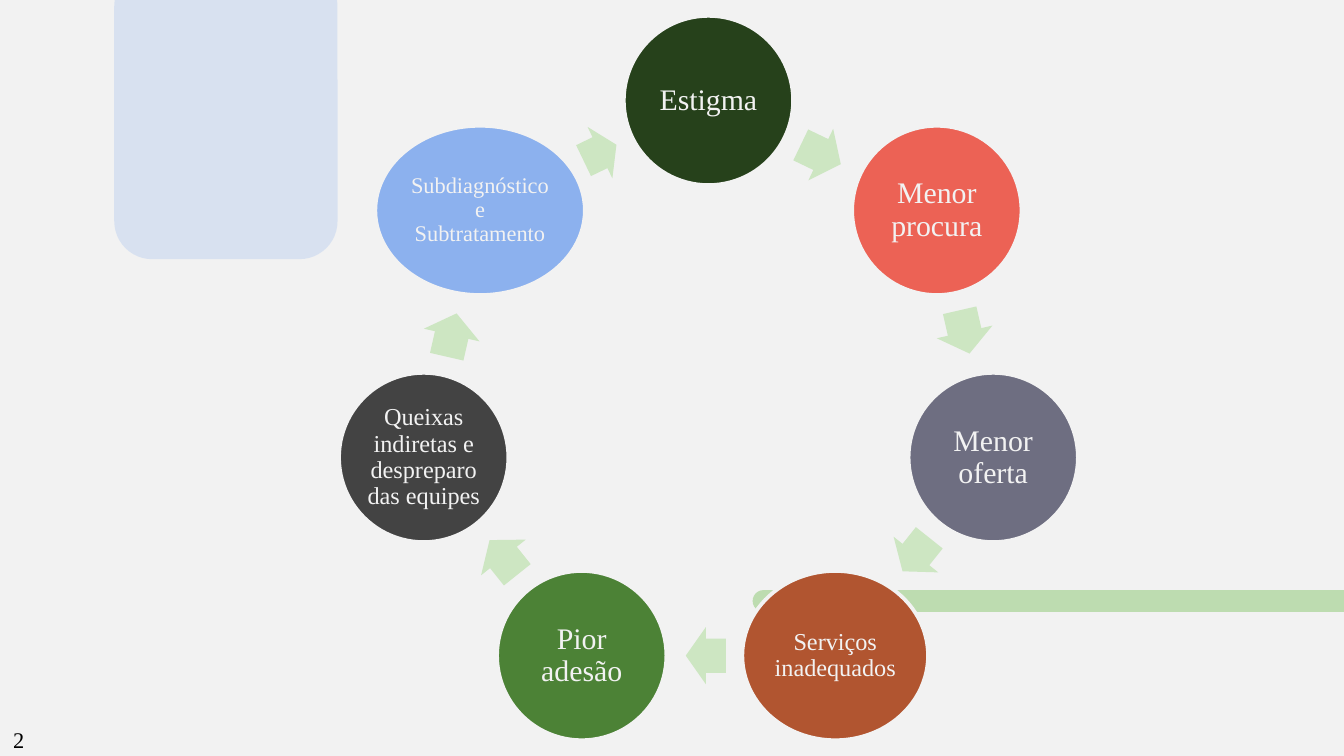
"""Build a slide showing the cycle of stigma as a ring of seven linked circles."""
from dataclasses import dataclass
from math import cos, pi, radians, sin

from lxml import etree
from pptx import Presentation
from pptx.dml.color import RGBColor
from pptx.enum.shapes import MSO_SHAPE
from pptx.enum.text import MSO_ANCHOR, PP_ALIGN
from pptx.oxml.ns import qn
from pptx.util import Cm, Pt

ROUND = MSO_SHAPE.ROUNDED_RECTANGLE
OVAL = MSO_SHAPE.OVAL
ARROW = MSO_SHAPE.RIGHT_ARROW
MIDDLE = MSO_ANCHOR.MIDDLE
CENTER = PP_ALIGN.CENTER


@dataclass
class Theme:
    font: str = "Times New Roman"
    back: str = "F2F2F2"
    ink: str = "000000"
    panel: str = "8CB1EE"
    bar: str = "ABD59A"
    arrow: str = "CDE6C2"
    forest: str = "26411B"
    coral: str = "EC6255"
    slate: str = "6E6E81"
    rust: str = "B15530"
    green: str = "4C8236"
    coal: str = "434343"
    large: int = 16
    medium: int = 13
    small: int = 12


theme = Theme()


def add_form(kind, x, y, wide, high, color):
    form = slide.shapes.add_shape(
        kind, Cm(x - wide / 2), Cm(y - high / 2), Cm(wide), Cm(high))
    form.shadow.inherit = False
    form.fill.solid()
    form.fill.fore_color.rgb = RGBColor.from_string(color)
    form.line.fill.background()
    return form


def set_text(frame, text, size, color):
    frame.word_wrap = True
    par = frame.paragraphs[0]
    par.text = text
    par.font.name = theme.font
    par.font.size = Pt(size)
    par.font.color.rgb = RGBColor.from_string(color)
    return par


deck = Presentation()
deck.slide_width, deck.slide_height = Cm(25.4), Cm(14.29)
slide = deck.slides.add_slide(deck.slide_layouts[6])
slide.background.fill.solid()
slide.background.fill.fore_color.rgb = RGBColor.from_string(theme.back)

decor = [
    (4.27, 2.15, 4.22, 5.5, theme.panel, 0.17, 25),
    (20.45, 11.36, 12.45, 0.41, theme.bar, 0.5, 74),
]
for x, y, wide, high, color, bend, alpha in decor:
    form = add_form(ROUND, x, y, wide, high, color)
    form.adjustments[0] = bend
    tint = form.fill._xPr.find(".//" + qn("a:srgbClr"))
    etree.SubElement(tint, qn("a:alpha"), val=str(alpha * 1000))

box = slide.shapes.add_textbox(Cm(0), Cm(13.61), Cm(1.42), Cm(0.76))
set_text(box.text_frame, "2", theme.small, theme.ink)

mid_x, mid_y, radius, size = 13.39, 7.42, 5.52, 3.2
steps = [
    ("Estigma", theme.forest, theme.large, size, 0.84, -0.04),
    ("Menor procura", theme.coral, theme.large, size, 0.84, -0.04),
    ("Menor oferta", theme.slate, theme.large, size, 0.81, -0.05),
    ("Serviços inadequados", theme.rust, theme.medium, 3.51, 0.76, 0.05),
    ("Pior adesão", theme.green, theme.large, size, 0.84, -0.02),
    ("Queixas indiretas e despreparo das equipes",
     theme.coal, theme.medium, size, 0.84, -0.02),
    ("Subdiagnóstico e Subtratamento",
     theme.panel, theme.small, 3.96, 0.69, 0.12),
]
turn = 360 / len(steps)
inner = radius * cos(pi / len(steps))

for i, (text, color, points, wide, length, shift) in enumerate(steps):
    angle = radians(i * turn)
    node = add_form(OVAL, mid_x + radius * sin(angle),
                    mid_y - radius * cos(angle), wide, size, color)
    node.line.color.rgb = RGBColor.from_string(theme.back)
    node.line.width = Pt(2)
    frame = node.text_frame
    frame.margin_left = frame.margin_right = Cm(0.05)
    frame.margin_top = frame.margin_bottom = Cm(0.05)
    frame.vertical_anchor = MIDDLE
    par = set_text(frame, text, points, theme.back)
    par.alignment = CENTER
    par.line_spacing = 0.9

    angle = radians((i + 0.5) * turn)
    arrow = add_form(ARROW, mid_x + inner * sin(angle) + shift * cos(angle),
                     mid_y - inner * cos(angle) + shift * sin(angle),
                     length, 1.08, theme.arrow)
    arrow.adjustments[0] = 0.6
    arrow.adjustments[1] = 0.5
    arrow.rotation = (i + 0.5) * turn

deck.save("out.pptx")
